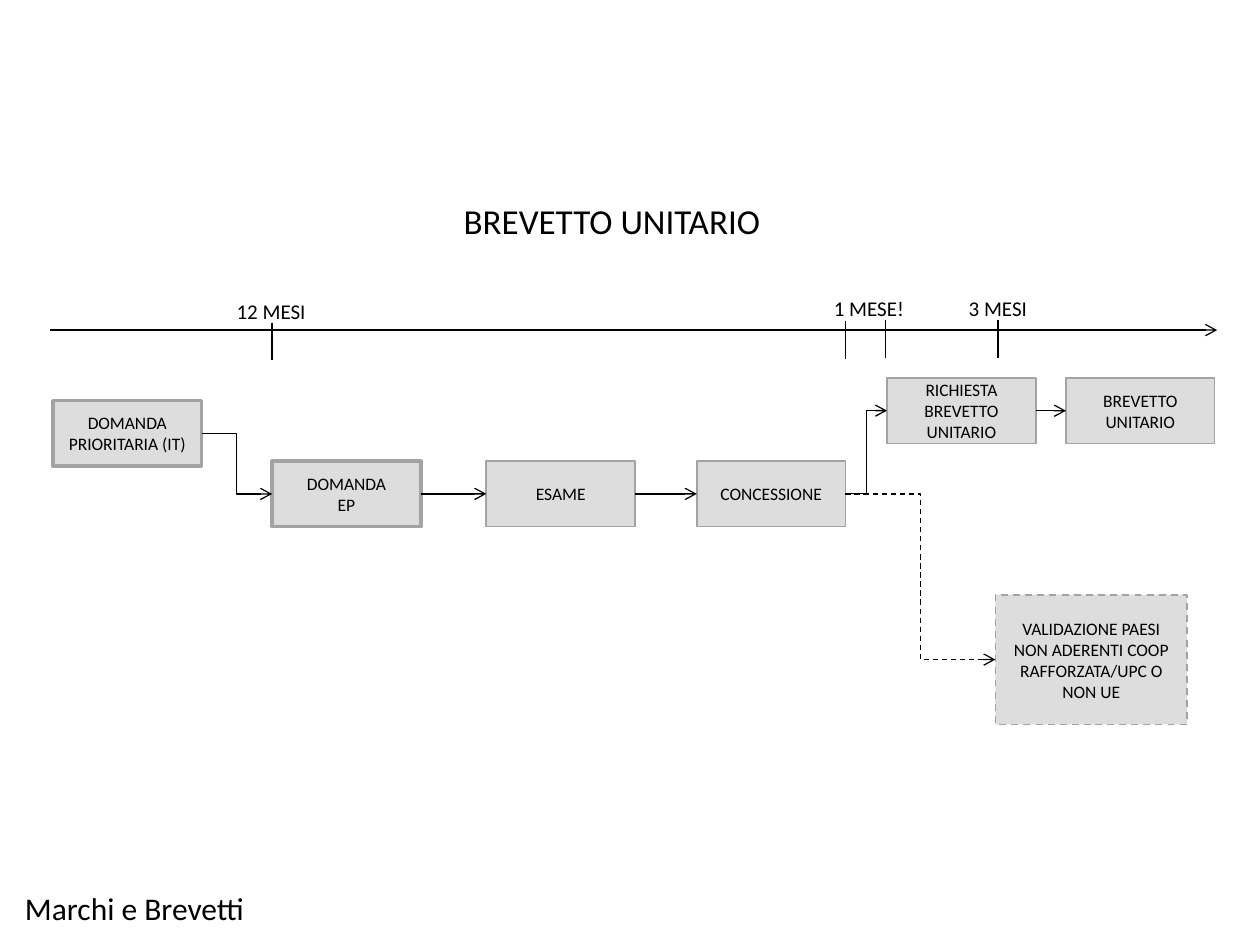
from lxml.etree import SubElement
from pptx import Presentation
from pptx.dml.color import RGBColor
from pptx.enum.dml import MSO_LINE
from pptx.enum.shapes import MSO_CONNECTOR as CONN, MSO_SHAPE
from pptx.enum.text import MSO_ANCHOR as ANCHOR, MSO_AUTO_SIZE as AUTO, PP_ALIGN as ALIGN
from pptx.oxml.ns import qn
from pptx.util import Inches, Pt

BLACK, GREY, EDGE = "000000", "DDDDDD", "A3A3A3"
BOX_W, BOX_H = 1.18, 0.52
TOP_ROW, MAIN_ROW = 3.0, 3.66
AXIS_Y, TICK_H = 2.62, 0.3
LEFT, RIGHT = 1, 3


def color(value):
    return RGBColor.from_string(value)


def write(tf, text, size=10, align=ALIGN.LEFT, anchor=ANCHOR.TOP, wrap=True):
    tf.word_wrap = wrap
    tf.auto_size = AUTO.NONE if wrap else AUTO.SHAPE_TO_FIT_TEXT
    tf.vertical_anchor = anchor
    for i, line in enumerate(text.split("\n")):
        p = tf.add_paragraph() if i else tf.paragraphs[0]
        p.alignment = align
        r = p.add_run()
        r.text = line
        r.font.size = Pt(size)
        r.font.name = "Calibri"
        r.font.color.rgb = color(BLACK)


def add_title(s, text, x, y, w, h):
    sp = s.shapes.title
    sp.left, sp.top, sp.width, sp.height = map(Inches, (x, y, w, h))
    write(sp.text_frame, text, size=20, wrap=False)


def add_label(s, text, x, y, w, h=0.3, size=12):
    sp = s.shapes.add_textbox(*map(Inches, (x, y, w, h)))
    write(sp.text_frame, text, size=size, wrap=False)


def add_step(s, text, x, y, w=BOX_W, h=BOX_H, line=1, dash=False):
    sp = s.shapes.add_shape(MSO_SHAPE.RECTANGLE, *map(Inches, (x, y, w, h)))
    sp.shadow.inherit = False
    sp.fill.solid()
    sp.fill.fore_color.rgb = color(GREY)
    sp.line.color.rgb = color(EDGE)
    sp.line.width = Pt(line)
    if dash:
        sp.line.dash_style = MSO_LINE.DASH
    write(sp.text_frame, text, align=ALIGN.CENTER, anchor=ANCHOR.MIDDLE)
    return sp


def add_line(s, x1=0, y1=0, x2=0, y2=0, kind=CONN.STRAIGHT, ends=None, dash=False, arrow=True):
    c = s.shapes.add_connector(kind, *map(Inches, (x1, y1, x2, y2)))
    if ends:
        c.begin_connect(ends[0], RIGHT)
        c.end_connect(ends[1], LEFT)
    c.line.color.rgb = color(BLACK)
    c.line.width = Pt(0.75)
    if dash:
        c.line.dash_style = MSO_LINE.DASH
    sp_pr = c._element.spPr
    if arrow:
        SubElement(sp_pr.find(qn("a:ln")), qn("a:tailEnd"), type="arrow")
    SubElement(sp_pr, qn("a:effectLst"))


def add_timeline(s):
    add_line(s, 0.4, AXIS_Y, 9.66, AXIS_Y)
    for x, y in ((2.16, 2.56), (6.71, 2.55), (7.03, 2.54), (7.92, 2.54)):
        add_line(s, x, y, x, y + TICK_H, arrow=False)
    for text, x, y, w in (("12 MESI", 1.78, 2.32, 0.76),
                          ("1 MESE!", 6.52, 2.3, 0.77),
                          ("3 MESI", 7.59, 2.3, 0.67)):
        add_label(s, text, x, y, w)


def add_flow(s):
    priority = add_step(s, "DOMANDA\nPRIORITARIA (IT)", 0.42, 3.18, line=2)
    filing = add_step(s, "DOMANDA\nEP", 2.16, MAIN_ROW, line=2)
    exam = add_step(s, "ESAME", 3.86, MAIN_ROW)
    grant = add_step(s, "CONCESSIONE", 5.53, MAIN_ROW)
    request = add_step(s, "RICHIESTA BREVETTO UNITARIO", 7.04, TOP_ROW)
    unitary = add_step(s, "BREVETTO UNITARIO", 8.46, TOP_ROW)
    validation = add_step(s, "VALIDAZIONE PAESI NON ADERENTI COOP RAFFORZATA/UPC O NON UE",
                          7.9, 4.72, w=1.52, h=1.03, dash=True)
    for ends in ((filing, exam), (exam, grant), (request, unitary)):
        add_line(s, ends=ends)
    for ends in ((priority, filing), (grant, request)):
        add_line(s, kind=CONN.ELBOW, ends=ends)
    add_line(s, kind=CONN.ELBOW, ends=(grant, validation), dash=True)


def main():
    prs = Presentation()
    prs.slide_width, prs.slide_height = Inches(10), Inches(7.5)
    s = prs.slides.add_slide(prs.slide_layouts[5])
    add_label(s, "Marchi e Brevetti", 0.1, 7.01, 1.97, h=0.4, size=18)
    add_title(s, "BREVETTO UNITARIO", 3.58, 1.53, 2.58, 0.44)
    add_timeline(s)
    add_flow(s)
    prs.save("out.pptx")


if __name__ == "__main__":
    main()
